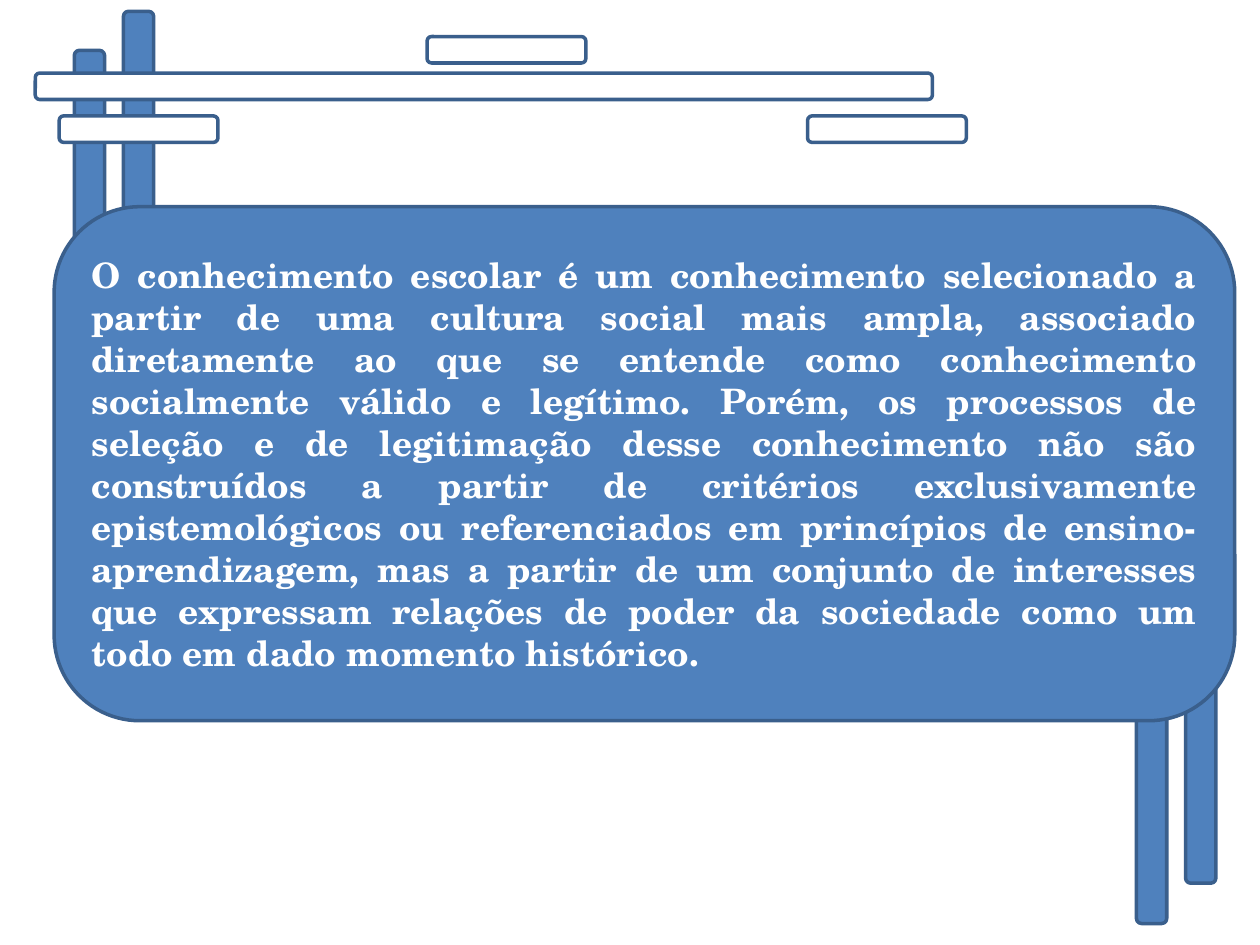
from dataclasses import dataclass
from pptx import Presentation
from pptx.dml.color import RGBColor
from pptx.enum.shapes import MSO_SHAPE
from pptx.enum.text import MSO_ANCHOR, PP_ALIGN
from pptx.util import Inches, Pt


@dataclass(frozen=True)
class Theme:
    blue: RGBColor = RGBColor(0x4F, 0x81, 0xBD)
    edge: RGBColor = RGBColor(0x3A, 0x5F, 0x8C)
    white: RGBColor = RGBColor(0xFF, 0xFF, 0xFF)
    font: str = "TeX Gyre Schola"
    size: int = 20
    line: int = 2


theme = Theme()

deck = Presentation()
deck.slide_width = Inches(10)
deck.slide_height = Inches(7.5)
slide = deck.slides.add_slide(deck.slide_layouts[6])


def add_box(left, top, width, height, fill):
    box = slide.shapes.add_shape(
        MSO_SHAPE.ROUNDED_RECTANGLE,
        Inches(left), Inches(top), Inches(width), Inches(height),
    )
    box.shadow.inherit = False
    box.fill.solid()
    box.fill.fore_color.rgb = fill
    box.line.color.rgb = theme.edge
    box.line.width = Pt(theme.line)
    return box


def write(box, text, *, size, color, bold=False, align=PP_ALIGN.LEFT):
    frame = box.text_frame
    frame.word_wrap = True
    frame.vertical_anchor = MSO_ANCHOR.MIDDLE
    para = frame.paragraphs[0]
    para.alignment = align
    run = para.add_run()
    run.text = text
    run.font.name = theme.font
    run.font.size = Pt(size)
    run.font.bold = bold
    run.font.color.rgb = color


for left, top in [(0.98, 0.09), (0.59, 0.4), (9.41, 2.48), (9.02, 2.8)]:
    add_box(left, top, 0.24, 4.53, theme.blue)

panel = add_box(0.43, 1.64, 9.37, 4.08, theme.blue)
write(
    panel,
    "O conhecimento escolar é um conhecimento selecionado a partir de uma "
    "cultura social mais ampla, associado diretamente ao que se entende como "
    "conhecimento socialmente válido e legítimo. Porém, os processos de seleção "
    "e de legitimação desse conhecimento não são construídos a partir de "
    "critérios exclusivamente epistemológicos ou referenciados em princípios de "
    "ensino-aprendizagem, mas a partir de um conjunto de interesses que "
    "expressam relações de poder da sociedade como um todo em dado momento "
    "histórico.",
    size=theme.size, color=theme.white, bold=True, align=PP_ALIGN.JUSTIFY,
)

for left, top, width in [
    (0.28, 0.58, 7.12),
    (6.41, 0.92, 1.26),
    (0.47, 0.92, 1.26),
    (3.39, 0.29, 1.26),
]:
    add_box(left, top, width, 0.21, theme.white)

deck.save("out.pptx")
